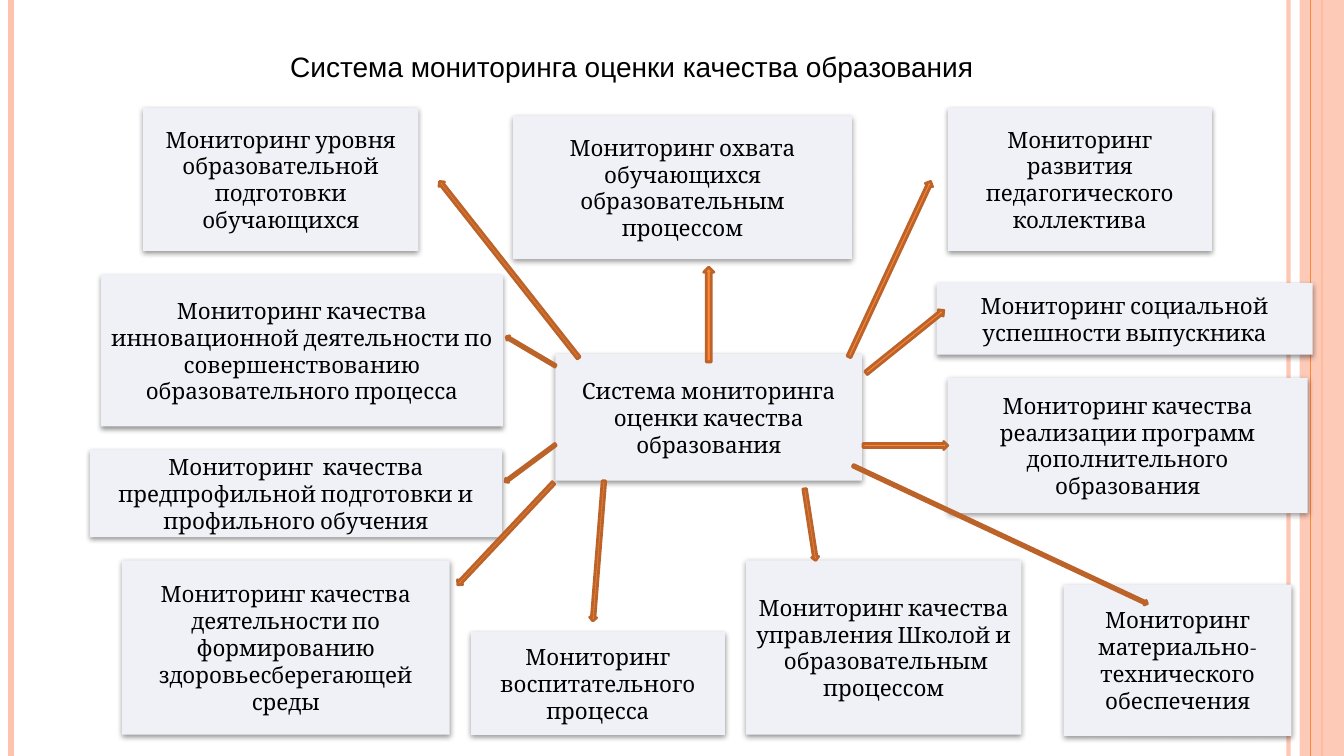
"""Build the slide showing the education quality monitoring system."""
import math

import lxml.etree
import pptx
import pptx.dml.color
import pptx.enum.shapes
import pptx.enum.text
import pptx.oxml.ns
import pptx.util

PX = 9144
WIDTH, HEIGHT = 1333, 750
COLORS = {"peach": "FEC3AE", "orange": "FE8637", "rust": "BC6329",
          "box": "EFF1F7", "black": "000000"}

TITLE = ("Система мониторинга оценки качества образования", (278, 44, 987, 44))
LEFT_STRIPES = [(1278, "peach", 3, 93), (11, "peach", 4.5, 100), (1311, "orange", 1.5, 100)]
BAND = (1289, 0, 44, HEIGHT)
BAND_STRIPES = [(1300, "orange", 0.75, 100)]
BOXES = [
    ("Мониторинг  качества предпрофильной подготовки и профильного обучения", (89, 446, 409, 87)),
    ("Мониторинг материально-технического обеспечения", (1055, 580, 226, 150)),
    ("Мониторинг качества инновационной деятельности по совершенствованию "
     "образовательного процесса", (100, 273, 399, 150)),
    ("Мониторинг социальной успешности выпускника", (929, 281, 373, 71)),
    ("Мониторинг качества реализации программ дополнительного образования", (940, 375, 357, 134)),
    ("Мониторинг качества деятельности по формированию здоровьесберегающей среды",
     (121, 556, 325, 173)),
    ("Мониторинг развития педагогического коллектива", (940, 107, 262, 142)),
    ("Мониторинг охвата обучающихся образовательным процессом", (509, 115, 336, 142)),
    ("Система мониторинга оценки качества образования", (551, 351, 304, 126)),
    ("Мониторинг уровня образовательной подготовки обучающихся", (142, 107, 273, 142)),
    ("Мониторинг качества управления Школой и  образовательным процессом",
     (740, 556, 273, 173)),
    ("Мониторинг воспитательного процесса", (467, 627, 252, 102)),
]
ARROWS = [
    ((856, 442), (940, 442), 8),
    ((703, 359), (703, 265), 10),
    ((842, 354), (923, 180), 8),
    ((574, 355), (436, 180), 7),
    ((859, 370), (936, 308), 8),
    ((551, 363), (502, 334), 5),
    ((551, 441), (501, 478), 5),
    ((549, 479), (454, 580), 7),
    ((599, 477), (588, 616), 7),
    ((846, 462), (1138, 599), 5),
    ((798, 485), (809, 556), 7),
]


def emu(*lengths):
    return [round(length * PX) for length in lengths]


def rgb(name):
    return pptx.dml.color.RGBColor.from_string(COLORS[name])


def add_child(parent, tag, **attributes):
    child = lxml.etree.SubElement(parent, pptx.oxml.ns.qn(tag))
    for key, value in attributes.items():
        child.set(key, str(value))
    return child


def set_opacity(properties, percent):
    color = next(properties.iter(pptx.oxml.ns.qn("a:srgbClr")))
    add_child(color, "a:alpha", val=percent * 1000)


def add_shadow(box):
    effects = box._element.spPr.find(pptx.oxml.ns.qn("a:effectLst"))
    shadow = add_child(effects, "a:outerShdw", blurRad=pptx.util.Pt(4), dist=pptx.util.Pt(1.6),
                       dir=90 * 60000, algn="ctr", rotWithShape=0)
    color = add_child(shadow, "a:srgbClr", val=COLORS["black"])
    add_child(color, "a:alpha", val=42000)


def add_block(slide, preset, place, fill, line=None, width=0):
    block = slide.shapes.add_shape(preset, *emu(*place))
    block.shadow.inherit = False
    block.fill.solid()
    block.fill.fore_color.rgb = rgb(fill)
    if line:
        block.line.color.rgb = rgb(line)
        block.line.width = pptx.util.Pt(width)
    else:
        block.line.fill.background()
    return block


def write(frame, text, font, size, align, anchor):
    frame.word_wrap = True
    frame.vertical_anchor = anchor
    paragraph = frame.paragraphs[0]
    paragraph.alignment = align
    run = paragraph.add_run()
    run.text = text
    run.font.name = font
    run.font.size = pptx.util.Pt(size)
    run.font.color.rgb = rgb("black")


def add_stripes(slide, stripes):
    for x, color, width, opacity in stripes:
        stripe = slide.shapes.add_connector(
            pptx.enum.shapes.MSO_CONNECTOR.STRAIGHT, *emu(x, 0, x, HEIGHT))
        stripe.line.color.rgb = rgb(color)
        stripe.line.width = pptx.util.Pt(width)
        add_child(stripe._element.spPr, "a:effectLst")
        if opacity < 100:
            set_opacity(stripe._element.spPr, opacity)


def add_arrow(slide, tail, tip, thickness):
    dx, dy = tip[0] - tail[0], tip[1] - tail[1]
    length = math.hypot(dx, dy)
    left = (tail[0] + tip[0] - length) / 2
    top = (tail[1] + tip[1] - thickness) / 2
    arrow = add_block(slide, pptx.enum.shapes.MSO_SHAPE.RIGHT_ARROW,
                      (left, top, length, thickness), "orange", "rust", 2)
    arrow.rotation = math.degrees(math.atan2(dy, dx)) % 360


def main():
    deck = pptx.Presentation()
    deck.slide_width, deck.slide_height = emu(WIDTH, HEIGHT)
    slide = deck.slides.add_slide(deck.slide_layouts[6])
    rectangle = pptx.enum.shapes.MSO_SHAPE.RECTANGLE
    align, anchor = pptx.enum.text.PP_ALIGN, pptx.enum.text.MSO_ANCHOR

    add_stripes(slide, LEFT_STRIPES)
    band = add_block(slide, rectangle, BAND, "peach")
    set_opacity(band._element.spPr, 87)
    add_stripes(slide, BAND_STRIPES)

    heading, place = TITLE
    title = slide.shapes.add_textbox(*emu(*place))
    write(title.text_frame, heading, font="Arial", size=20, align=align.LEFT, anchor=anchor.TOP)
    title.text_frame.auto_size = pptx.enum.text.MSO_AUTO_SIZE.SHAPE_TO_FIT_TEXT

    for topic, place in BOXES:
        box = add_block(slide, rectangle, place, "box")
        add_shadow(box)
        write(box.text_frame, topic, font="Cambria", size=16,
              align=align.CENTER, anchor=anchor.MIDDLE)

    for tail, tip, thickness in ARROWS:
        add_arrow(slide, tail, tip, thickness)

    deck.save("out.pptx")


if __name__ == "__main__":
    main()
